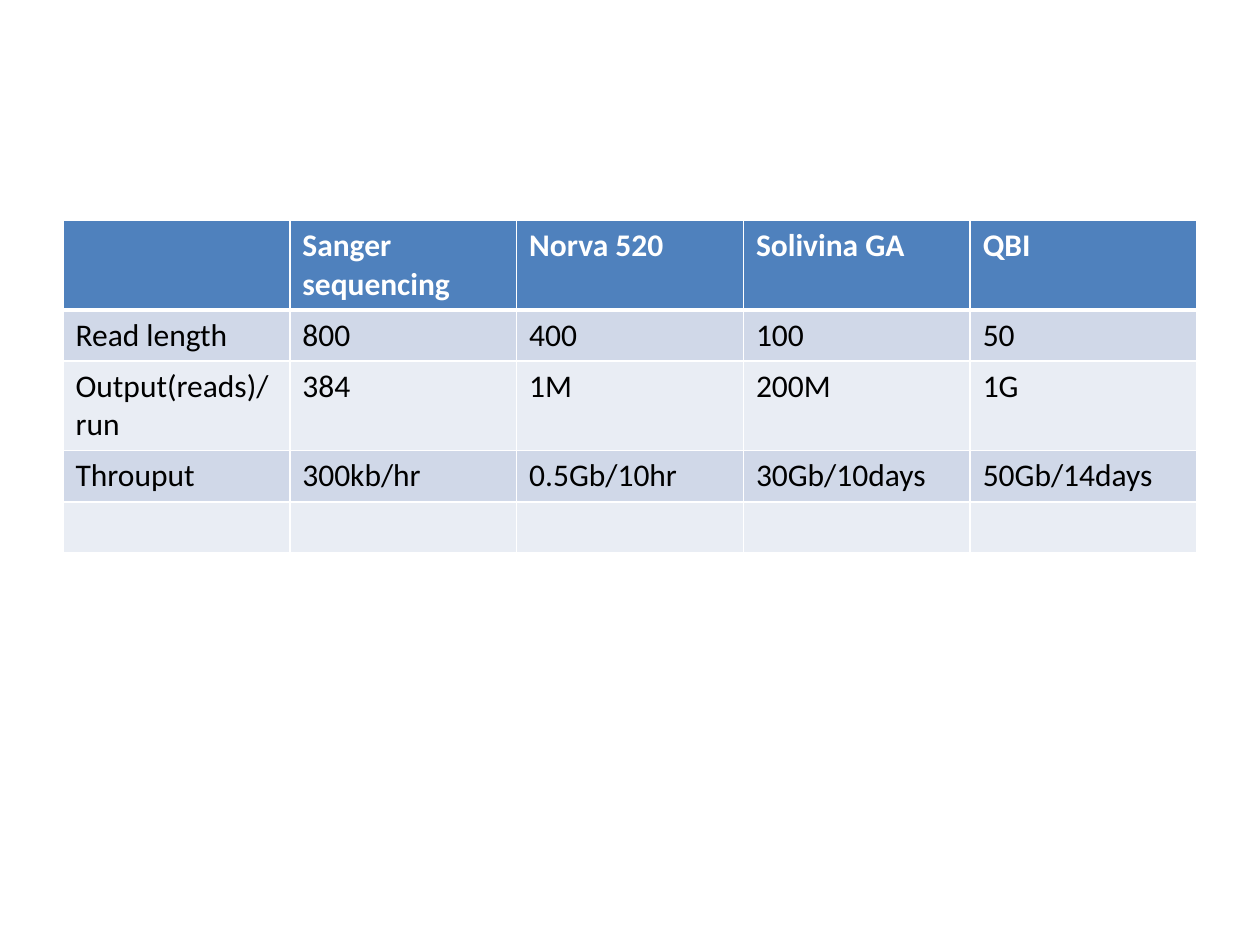
from lxml import etree
from pptx import Presentation
from pptx.dml.color import RGBColor
from pptx.oxml.ns import qn
from pptx.util import Inches, Pt

ROWS = [
    ["", "Sanger sequencing", "Norva 520", "Solivina GA", "QBI"],
    ["Read length", "800", "400", "100", "50"],
    ["Output(reads)/run", "384", "1M", "200M", "1G"],
    ["Throuput", "300kb/hr", "0.5Gb/10hr", "30Gb/10days", "50Gb/14days"],
    [""] * 5,
]
HEIGHTS = [0.71, 0.4, 0.71, 0.4, 0.4]
COLORS = {
    "head": "4F81BD",
    "odd": "D0D8E8",
    "even": "E9EDF4",
    "rule": "FFFFFF",
    "light": "FFFFFF",
    "dark": "000000",
}


def color(name):
    return RGBColor.from_string(COLORS[name])


def add_border(cell, side, width):
    line = etree.SubElement(cell._tc.get_or_add_tcPr(), qn(f"a:ln{side}"),
                            w=str(Pt(width)))
    fill = etree.SubElement(line, qn("a:solidFill"))
    etree.SubElement(fill, qn("a:srgbClr"), val=COLORS["rule"])


def style_cell(cell, text, row):
    head = row == 0
    thick = {"T": 3 if row == 1 else 1, "B": 3 if head else 1}
    for side in "LRTB":
        add_border(cell, side, thick.get(side, 1))
    cell.fill.solid()
    band = "head" if head else "odd" if row % 2 else "even"
    cell.fill.fore_color.rgb = color(band)
    cell.text = text
    font = cell.text_frame.paragraphs[0].font
    font.name = "Calibri"
    font.size = Pt(18)
    font.bold = head
    font.color.rgb = color("light" if head else "dark")


def main():
    deck = Presentation()
    deck.slide_width, deck.slide_height = Inches(10), Inches(7.5)
    slide = deck.slides.add_slide(deck.slide_layouts[6])
    table = slide.shapes.add_table(
        len(ROWS), len(ROWS[0]), Inches(0.5), Inches(1.75),
        Inches(9), Inches(sum(HEIGHTS))).table
    for row, (texts, height) in enumerate(zip(ROWS, HEIGHTS)):
        table.rows[row].height = Inches(height)
        for col, text in enumerate(texts):
            style_cell(table.cell(row, col), text, row)
    deck.save("out.pptx")


if __name__ == "__main__":
    main()
